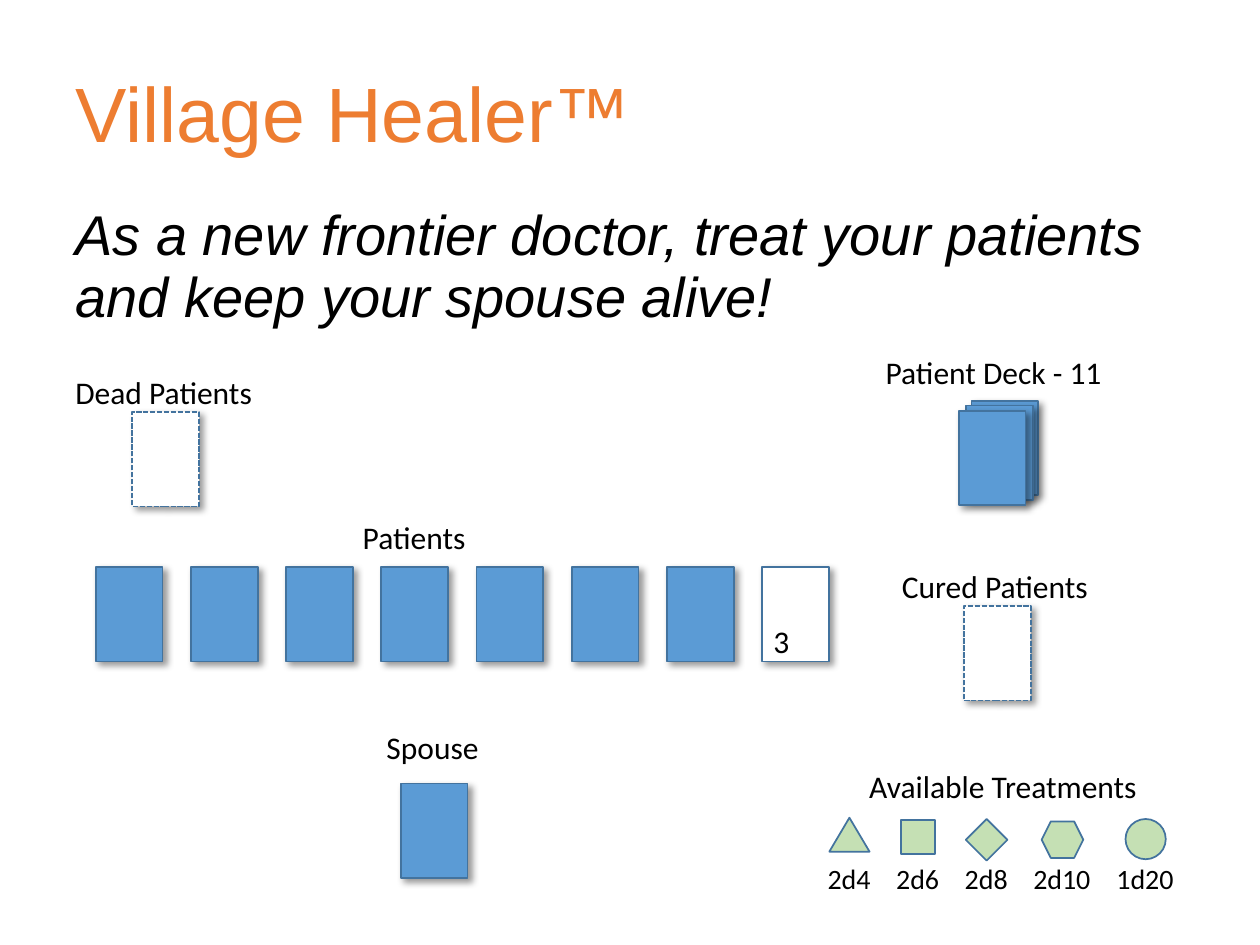
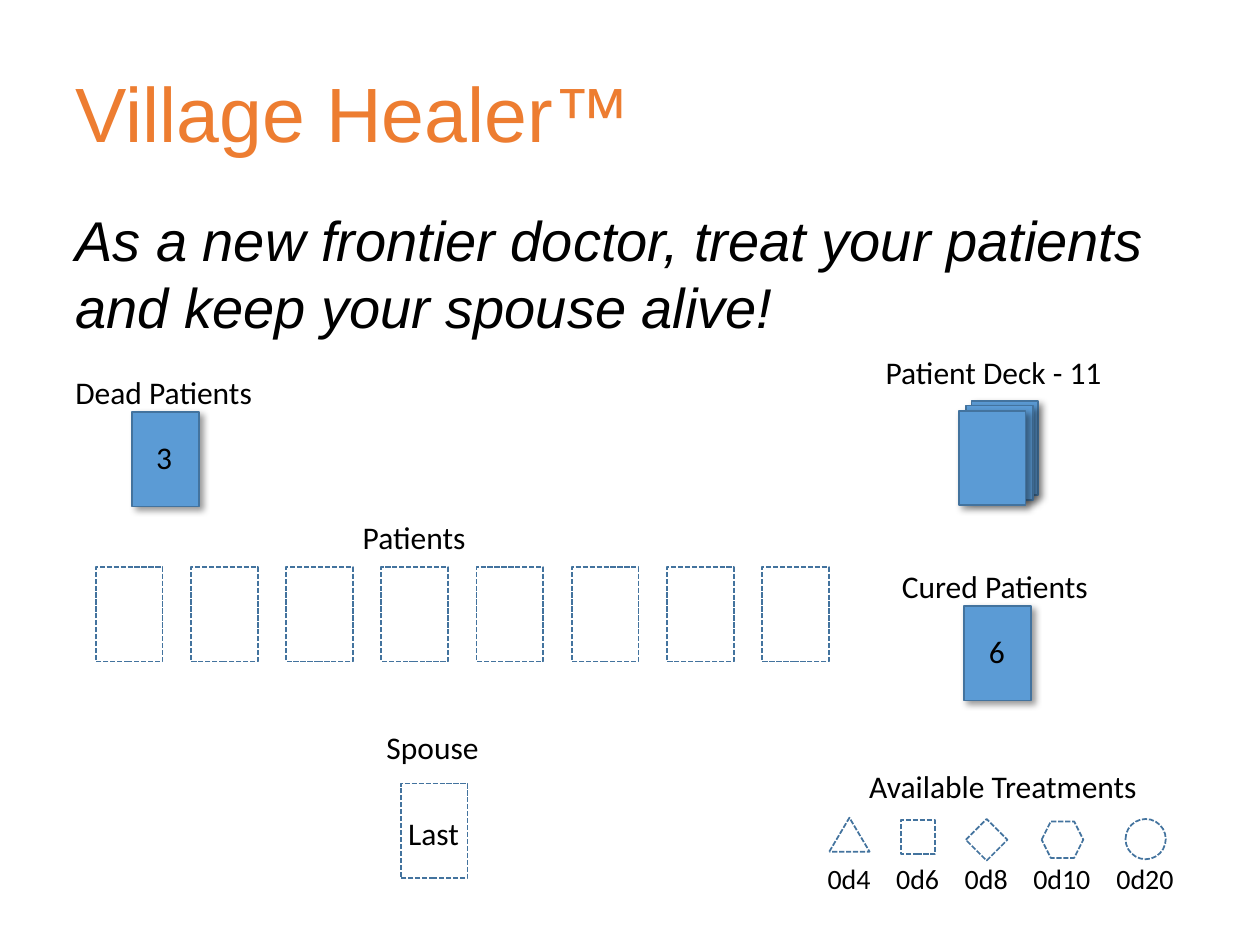
from lxml import etree
from pptx import Presentation
from pptx.dml.color import RGBColor
from pptx.enum.dml import MSO_LINE
from pptx.enum.shapes import MSO_SHAPE
from pptx.enum.text import MSO_ANCHOR
from pptx.oxml.ns import qn
from pptx.util import Pt

# Content
TITLE = "Village Healer™"
PITCH = "As a new frontier doctor, treat your patients and keep your spouse alive!"
LABELS = [  # text, left, top, width
    ("Patient Deck - 11", 499, 198, 139.7),
    ("Dead Patients", 36, 209.5, 116.6),
    ("Patients", 200.2, 292.3, 74.2),
    ("Cured Patients", 508.3, 320.4, 122.4),
    ("Spouse", 213.8, 412.6, 67.7),
    ("Available Treatments", 489.6, 434.9, 169.2),
]
DICE = [  # sides, shape, top, width, height, label width
    ("d4", MSO_SHAPE.ISOSCELES_TRIANGLE, 467.3, 23, 19.4, 39.2),
    ("d6", MSO_SHAPE.RECTANGLE, 468.7, 19.4, 19.4, 39.2),
    ("d8", MSO_SHAPE.DIAMOND, 468, 23.8, 23.8, 39.2),
    ("d10", MSO_SHAPE.HEXAGON, 469.4, 23.8, 20.9, 47.5),
    ("d20", MSO_SHAPE.OVAL, 468, 23, 23, 47.5),
]
DECK = [(555.1, 229), (552.2, 231.8), (547.9, 234.7)]
DEAD, CURED, SPOUSE = (75.6, 235.4), (550.8, 346.3), (229, 447.8)
CARD_W, CARD_H = 38.2, 54
ROW_X, ROW_Y, ROW_STEP, ROW_COUNT = 54.7, 324, 54.4, 8
PATIENTS = [(ROW_X + i * ROW_STEP, ROW_Y) for i in range(ROW_COUNT)]

# Looks
ORANGE, BLACK, WHITE = "ED7D31", "000000", "FFFFFF"
BLUE, OUTLINE, GREEN = "5B9BD5", "43739E", "C5E0B4"
BACK = dict(fill=BLUE, shadow=True)
FACE_UP = dict(fill=WHITE, shadow=True)
EMPTY_PILE = dict(fill=WHITE, dashed=True, shadow=True)
EMPTY = dict(fill=WHITE, dashed=True)

# The start and the end of a game; marks are text, left, top, width
GAMES = [
    dict(spacing=0.93, piles=EMPTY_PILE, spouse=BACK,
         patients=[BACK] * 7 + [FACE_UP],
         counts=[2, 2, 2, 2, 1], dice=dict(fill=GREEN),
         marks=[("3", 434.9, 352.1, 23.8)]),
    dict(spacing=1.0, piles=BACK, spouse=EMPTY, patients=[EMPTY] * 8,
         counts=[0] * 5, dice=EMPTY,
         marks=[("6", 558, 357.8, 23.8), ("3", 82.1, 247, 23.8),
                ("Last", 226.1, 461.5, 43.9)]),
]


def color(hex_text):
    return RGBColor.from_string(hex_text)


def add_text(s, text, x, y, w, h=28.8, size=18, font="Calibri", ink=BLACK,
             italic=False, wrap=False, inset=3.6, anchor=MSO_ANCHOR.TOP,
             spacing=1.0, after=0):
    tf = s.shapes.add_textbox(Pt(x), Pt(y), Pt(w), Pt(h)).text_frame
    tf.word_wrap = wrap
    tf.vertical_anchor = anchor
    tf.margin_left = tf.margin_right = Pt(7.2)
    tf.margin_top = tf.margin_bottom = Pt(inset)
    p = tf.paragraphs[0]
    p.line_spacing, p.space_after = spacing, Pt(after)
    r = p.add_run()
    r.text = text
    r.font.size, r.font.name, r.font.italic = Pt(size), font, italic
    r.font.color.rgb = color(ink)


def add_shadow(sp):
    effects = sp._element.spPr.find(qn("a:effectLst"))
    outer = etree.SubElement(effects, qn("a:outerShdw"), blurRad=str(Pt(4)),
                             dist=str(Pt(3)), dir="2700000", algn="tl",
                             rotWithShape="0")
    black = etree.SubElement(outer, qn("a:srgbClr"), val=BLACK)
    etree.SubElement(black, qn("a:alpha"), val="40000")


def add_piece(s, kind, x, y, w, h, fill, dashed=False, shadow=False):
    sp = s.shapes.add_shape(kind, Pt(x), Pt(y), Pt(w), Pt(h))
    sp.shadow.inherit = False
    sp.fill.solid()
    sp.fill.fore_color.rgb = color(fill)
    sp.line.color.rgb = color(OUTLINE)
    sp.line.width = Pt(1)
    if dashed:
        sp.line.dash_style = MSO_LINE.SQUARE_DOT
    if shadow:
        add_shadow(sp)


def add_card(s, place, look):
    add_piece(s, MSO_SHAPE.RECTANGLE, *place, CARD_W, CARD_H, **look)


def add_dice(s, counts, look):
    x = 465.8
    for count, (sides, kind, top, w, h, label_w) in zip(counts, DICE):
        add_piece(s, kind, x + (label_w - w) / 2, top, w, h, **look)
        add_text(s, f"{count}{sides}", x, 488.9, label_w, 26.6, size=16)
        x += label_w


def add_game(prs, game):
    s = prs.slides.add_slide(prs.slide_layouts[6])
    # Heading
    add_text(s, TITLE, 36, 21.6, 648, 90, size=44, font="Arial", ink=ORANGE,
             wrap=True, inset=7.2, anchor=MSO_ANCHOR.MIDDLE, spacing=0.93)
    add_text(s, PITCH, 36, 110.2, 648, 109.4, size=32, font="Arial",
             italic=True, wrap=True, inset=7.2, spacing=game["spacing"],
             after=14)
    # Cards
    places = DECK + [DEAD, CURED, SPOUSE] + PATIENTS
    looks = [BACK] * 3 + [game["piles"]] * 2 + [game["spouse"]]
    for place, look in zip(places, looks + game["patients"]):
        add_card(s, place, look)
    # Treatments
    add_dice(s, game["counts"], game["dice"])
    # Labels and card marks
    for text, x, y, w in LABELS + game["marks"]:
        add_text(s, text, x, y, w)


def main():
    prs = Presentation()
    prs.slide_width, prs.slide_height = Pt(720), Pt(540)
    for game in GAMES:
        add_game(prs, game)
    prs.save("out.pptx")


if __name__ == "__main__":
    main()
